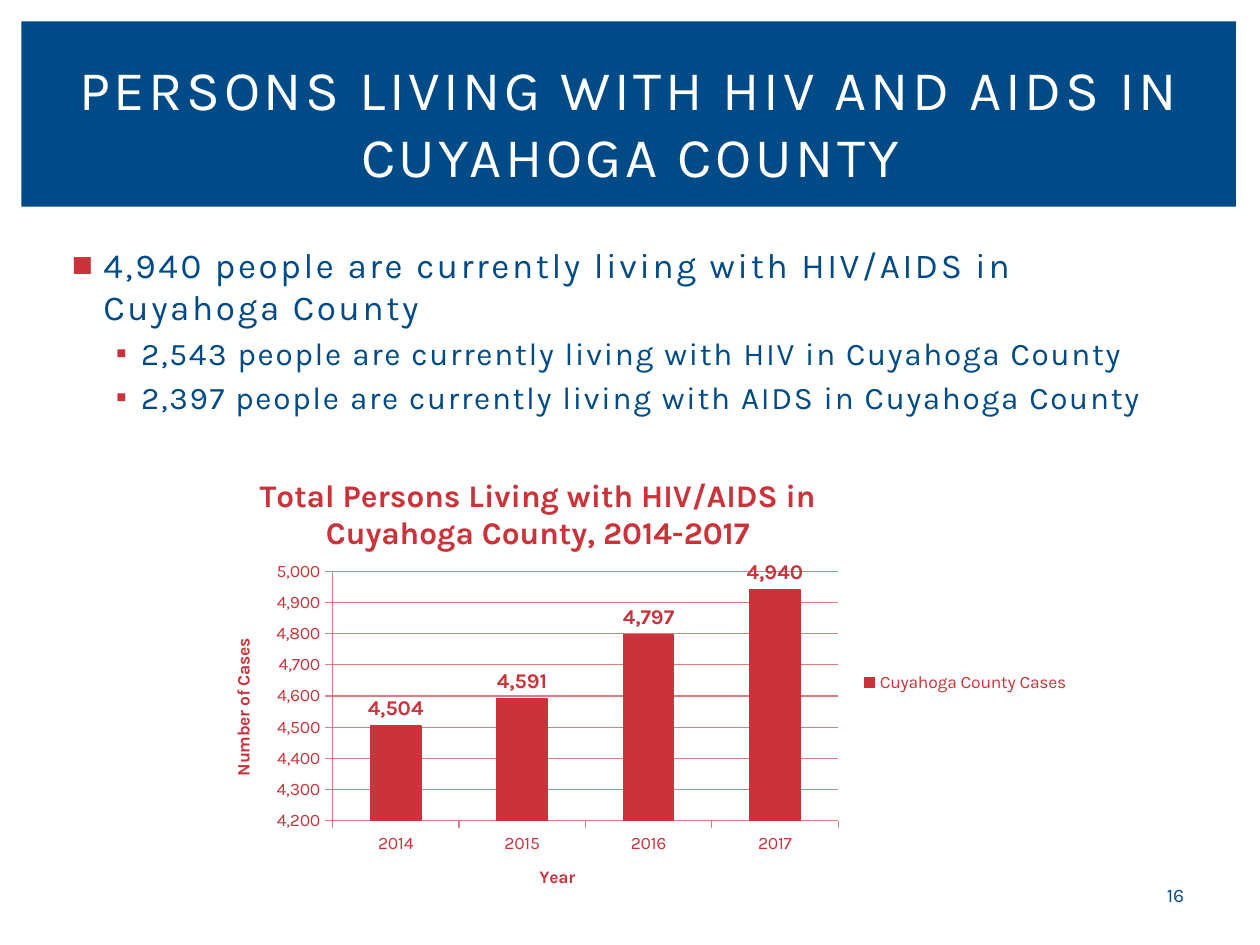
from lxml import etree
from pptx import Presentation
from pptx.chart.data import CategoryChartData
from pptx.dml.color import RGBColor
from pptx.enum.chart import XL_CHART_TYPE, XL_LABEL_POSITION, XL_LEGEND_POSITION, XL_TICK_MARK
from pptx.enum.shapes import MSO_SHAPE
from pptx.enum.text import MSO_ANCHOR, MSO_AUTO_SIZE, PP_ALIGN
from pptx.oxml.ns import qn
from pptx.util import Inches, Pt

COLUMN = XL_CHART_TYPE.COLUMN_CLUSTERED
ABOVE = XL_LABEL_POSITION.OUTSIDE_END
RIGHT = XL_LEGEND_POSITION.RIGHT
OUT = XL_TICK_MARK.OUTSIDE
RECT = MSO_SHAPE.RECTANGLE
TOP, MIDDLE = MSO_ANCHOR.TOP, MSO_ANCHOR.MIDDLE
FIXED = MSO_AUTO_SIZE.NONE
CENTER = PP_ALIGN.CENTER

TITLE = "PERSONS LIVING WITH HIV AND AIDS IN CUYAHOGA COUNTY"
POINTS = [
    (0, "4,940 people are currently living with HIV/AIDS in Cuyahoga County"),
    (1, "2,543 people are currently living with HIV in Cuyahoga County"),
    (1, "2,397 people are currently living with AIDS in Cuyahoga County"),
]
PAGE = "16"
CHART = {
    "title": "Total Persons Living with HIV/AIDS in Cuyahoga County, 2014-2017",
    "series": "Cuyahoga County Cases",
    "cases": {"2014": 4504, "2015": 4591, "2016": 4797, "2017": 4940},
    "x": "Year",
    "y": "Number of Cases",
}
SCALE = {"minimum_scale": 4200, "maximum_scale": 5000, "major_unit": 100}

THEME = {
    "font": "Karla",
    "blue": RGBColor.from_string("004B87"),
    "red": RGBColor.from_string("CB333B"),
    "pale": RGBColor.from_string("DB7E83"),
    "white": RGBColor.from_string("FFFFFF"),
    "title": 32, "page": 11, "chart": 10, "label": 12, "head": 18,
}
# size, letter spacing, left margin, indent, bullet
LEVELS = [(20, 1.5, 0.3, -0.25, "■"), (18, 1, 0.6, -0.2, "▪")]

BOX = {
    "band": (0.17, 0.17, 9.64, 1.47),
    "title": (0.42, 0.39, 9.17, 1.15),
    "body": (0.42, 1.88, 9.19, 4.82),
    "page": (9.01, 6.95, 0.64, 0.3),
    "chart": (1.67, 3.58, 6.92, 3.67),
}


def place(shape, name):
    spots = zip(("left", "top", "width", "height"), BOX[name])
    for key, val in spots:
        setattr(shape, key, Inches(val))


def style(font, size, color, bold=False):
    look = {"name": THEME["font"], "size": Pt(size), "bold": bold}
    for key, val in look.items():
        setattr(font, key, val)
    font.color.rgb = THEME[color]


def write(par, text, size, color, gap=0):
    """Add a run with letter spacing of gap points."""
    run = par.add_run()
    run.text = text
    style(run.font, size, color)
    if gap:
        run.font._element.set("spc", str(int(gap * 100)))


def frame(shape, anchor):
    look = {"word_wrap": True, "auto_size": FIXED, "vertical_anchor": anchor}
    for key, val in look.items():
        setattr(shape.text_frame, key, val)
    return shape.text_frame


def bullet(par, left, indent, mark):
    props = par._p.get_or_add_pPr()
    props.set("marL", str(Inches(left)))
    props.set("indent", str(Inches(indent)))
    color = etree.SubElement(props, qn("a:buClr"))
    etree.SubElement(color, qn("a:srgbClr"), val=str(THEME["red"]))
    etree.SubElement(props, qn("a:buFont"), typeface="Arial")
    etree.SubElement(props, qn("a:buChar"), char=mark)


def pin(part, **spots):
    """Fix a chart part at fractions of the chart area."""
    layout = part.find(qn("c:layout"))
    if layout is None:
        layout = etree.Element(qn("c:layout"))
        part.insert(0, layout)
    manual = etree.SubElement(layout, qn("c:manualLayout"))
    if "w" in spots:
        etree.SubElement(manual, qn("c:layoutTarget"), val="inner")
    for key in ("x", "y"):
        etree.SubElement(manual, qn(f"c:{key}Mode"), val="edge")
    for key, val in spots.items():
        etree.SubElement(manual, qn(f"c:{key}"), val=str(val))


def caption(title, text, size):
    par = title.text_frame.paragraphs[0]
    run = par.add_run()
    run.text = text
    style(run.font, size, "red", True)


def add_text(slide):
    title, body = slide.shapes.title, slide.placeholders[1]
    band = slide.shapes.add_shape(RECT, *map(Inches, BOX["band"]))
    band.shadow.inherit = False
    band.fill.solid()
    band.fill.fore_color.rgb = THEME["blue"]
    band.line.fill.background()
    title.element.addprevious(band.element)

    place(title, "title")
    par = frame(title, MIDDLE).paragraphs[0]
    par.alignment = CENTER
    write(par, TITLE, THEME["title"], "white", 2)

    place(body, "body")
    text = frame(body, TOP)
    for i, (level, words) in enumerate(POINTS):
        par = text.add_paragraph() if i else text.paragraphs[0]
        size, gap, *marks = LEVELS[level]
        par.level = level
        bullet(par, *marks)
        write(par, words, size, "blue", gap)

    page = slide.shapes.add_textbox(*map(Inches, BOX["page"]))
    par = frame(page, MIDDLE).paragraphs[0]
    par.alignment = CENTER
    write(par, PAGE, THEME["page"], "blue")


def add_cases(slide):
    data = CategoryChartData(number_format="#,##0")
    data.categories = list(CHART["cases"])
    data.add_series(CHART["series"], list(CHART["cases"].values()))
    spot = map(Inches, BOX["chart"])
    chart = slide.shapes.add_chart(COLUMN, *spot, data).chart
    style(chart.font, THEME["chart"], "red")

    caption(chart.chart_title, CHART["title"], THEME["head"])
    pin(chart.chart_title._element, x=0.05, y=0.04)
    pin(chart._chartSpace.chart.plotArea, x=0.14, y=0.26, w=0.58, h=0.54)
    chart.has_legend = True
    chart.legend.position = RIGHT
    chart.legend.include_in_layout = False

    across, up = chart.category_axis, chart.value_axis
    for axis, name in ((across, "x"), (up, "y")):
        caption(axis.axis_title, CHART[name], THEME["chart"])
        axis.major_tick_mark = OUT
        axis.format.line.color.rgb = THEME["pale"]
        axis.format.line.width = Pt(0.75)
    for key, val in SCALE.items():
        setattr(up, key, val)
    up.tick_labels.number_format = "#,##0"
    up.tick_labels.number_format_is_linked = False
    up.major_gridlines.format.line.color.rgb = THEME["pale"]
    up.major_gridlines.format.line.width = Pt(0.75)

    plot = chart.plots[0]
    plot.gap_width = 150
    plot.vary_by_categories = False
    bars = plot.series[0]
    bars.format.fill.solid()
    bars.format.fill.fore_color.rgb = THEME["red"]
    bars.format.line.color.rgb = THEME["red"]
    bars.format.line.width = Pt(0.75)
    labels = bars.data_labels
    labels.show_value = True
    labels.position = ABOVE
    style(labels.font, THEME["label"], "red", True)


def main():
    deck = Presentation()
    deck.slide_width, deck.slide_height = Inches(10), Inches(7.5)
    slide = deck.slides.add_slide(deck.slide_layouts[1])
    add_text(slide)
    add_cases(slide)
    deck.save("out.pptx")


if __name__ == "__main__":
    main()
